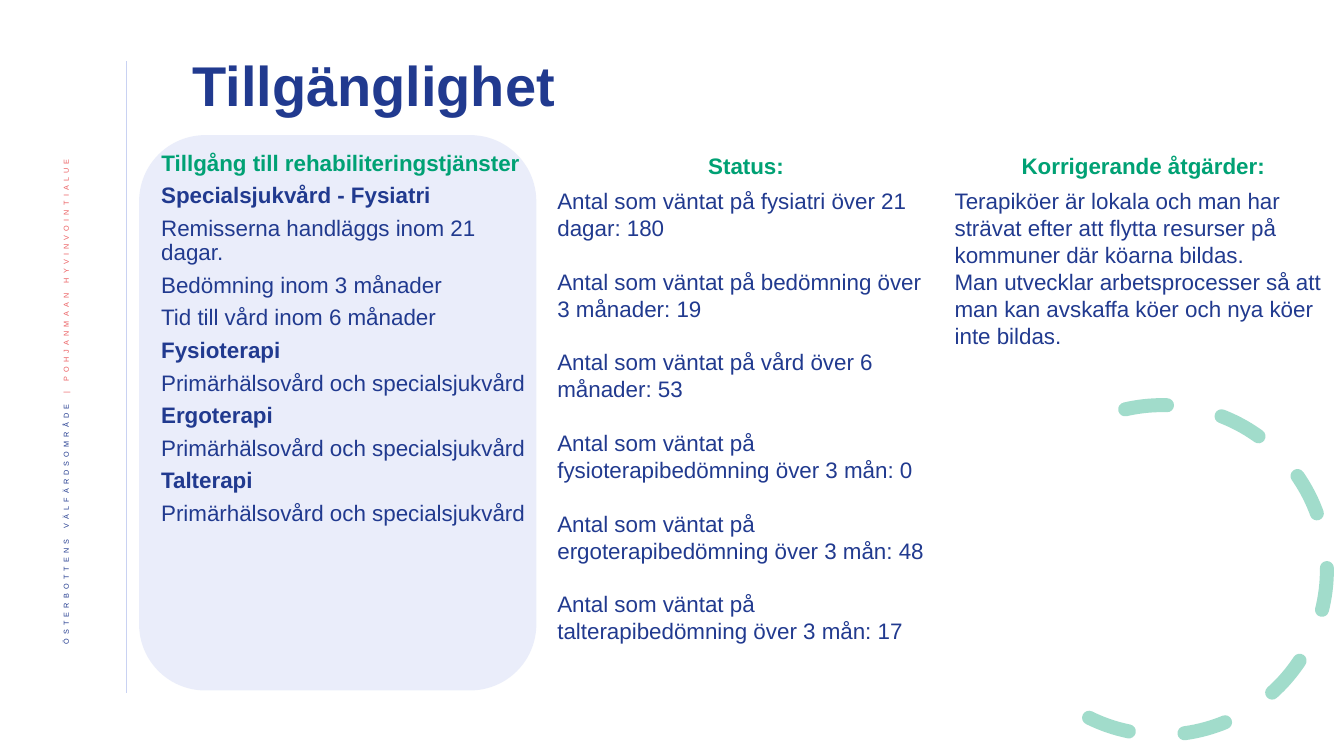
from lxml import etree
from pptx import Presentation
from pptx.dml.color import RGBColor
from pptx.enum.dml import MSO_LINE
from pptx.enum.shapes import MSO_CONNECTOR, MSO_SHAPE
from pptx.enum.text import MSO_ANCHOR, PP_ALIGN
from pptx.oxml.ns import qn
from pptx.util import Inches, Pt

TITLE = "Tillgänglighet"
ORGANISATION = [("ÖSTERBOTTENS VÄLFÄRDSOMRÅDE ", "navy"), ("| POHJANMAAN HYVINVOINTIALUE ", "coral")]
SERVICES_HEADING = "Tillgång till rehabiliteringstjänster "
UNIT_CARE = "Primärhälsovård och specialsjukvård"
SERVICES = [
    ("Specialsjukvård - Fysiatri", [
        "Remisserna handläggs inom 21 dagar.",
        "Bedömning inom 3 månader",
        "Tid till vård inom 6 månader",
    ]),
    ("Fysioterapi", [UNIT_CARE]),
    ("Ergoterapi", [UNIT_CARE]),
    ("Talterapi", [UNIT_CARE]),
]
STATUS_HEADING = "Status:"
STATUS = [
    "Antal som väntat på fysiatri över 21 dagar: 180",
    "Antal som väntat på bedömning över 3 månader: 19",
    "Antal som väntat på vård över 6 månader: 53",
    "Antal som väntat på fysioterapibedömning över 3 mån: 0",
    "Antal som väntat på ergoterapibedömning över 3 mån: 48",
    "Antal som väntat på talterapibedömning över 3 mån: 17",
]
ACTIONS_HEADING = "Korrigerande åtgärder:"
ACTIONS = [
    "Terapiköer är lokala och man har strävat efter att flytta resurser på kommuner där köarna bildas.",
    "Man utvecklar arbetsprocesser så att man kan avskaffa köer och nya köer inte bildas.",
]

THEME = {
    "font": "Arial",
    "navy": RGBColor(0x21, 0x3A, 0x8F),
    "green": RGBColor(0x00, 0xA1, 0x74),
    "coral": RGBColor(0xEB, 0x5C, 0x5F),
    "lavender": RGBColor(0xC9, 0xD2, 0xF2),
    "title": Pt(40),
    "body": Pt(16),
    "side": Pt(9),
    "tight": 0.9,
    "gap": Pt(6),
    "line_gap": Pt(19.2),
}
COLUMN_TOP, COLUMN_WIDTH = 1.46, 3.94


def add_box(slide, left, top, width, height, anchor=MSO_ANCHOR.TOP):
    box = slide.shapes.add_textbox(Inches(left), Inches(top), Inches(width), Inches(height))
    frame = box.text_frame
    frame.word_wrap = True
    frame.vertical_anchor = anchor
    return frame


def add_run(paragraph, text, color, size, bold=False):
    run = paragraph.add_run()
    run.text = text
    for name, value in {"name": THEME["font"], "size": size, "bold": bold}.items():
        setattr(run.font, name, value)
    run.font.color.rgb = THEME[color]
    return run


def add_line(frame, text, color="navy", size="body", bold=False, **layout):
    first = frame.paragraphs[0]
    paragraph = frame.add_paragraph() if first.runs else first
    for name, value in layout.items():
        setattr(paragraph, name, value)
    add_run(paragraph, text, color, THEME[size], bold)


def add_heading(frame, text, **layout):
    add_line(frame, text, "green", bold=True, alignment=PP_ALIGN.CENTER,
             space_after=THEME["gap"], **layout)


def set_alpha(element, percent):
    color = element.find(".//" + qn("a:srgbClr"))
    etree.SubElement(color, qn("a:alpha")).set("val", str(percent * 1000))


def add_divider(slide):
    divider = slide.shapes.add_connector(
        MSO_CONNECTOR.STRAIGHT, Inches(1.25), Inches(0.61), Inches(1.25), Inches(6.88))
    divider.line.color.rgb = THEME["lavender"]
    divider.line.width = Pt(0.5)
    etree.SubElement(divider._element.spPr, qn("a:effectLst"))


def add_organisation(slide):
    frame = add_box(slide, 0.42, 1.42, 0.52, 5.73, MSO_ANCHOR.MIDDLE)
    frame._txBody.bodyPr.set("vert", "vert270")
    paragraph = frame.paragraphs[0]
    paragraph.alignment = PP_ALIGN.RIGHT
    paragraph.line_spacing = THEME["tight"]
    for text, color in ORGANISATION:
        properties = add_run(paragraph, text, color, THEME["side"]).font._element
        properties.set("baseline", "30000")
        properties.set("spc", "300")


def add_dashed_arc(slide):
    arc = slide.shapes.add_shape(MSO_SHAPE.ARC, Inches(9.89), Inches(4.02), Inches(3.27), Inches(3.27))
    arc.shadow.inherit = False
    arc.rotation = 98.9
    for index, degrees in enumerate((158.17, 17.81)):
        arc.adjustments[index] = degrees * 0.6
    arc.fill.background()
    arc.line.color.rgb = THEME["green"]
    arc.line.width = Pt(10)
    arc.line.dash_style = MSO_LINE.DASH
    outline = arc._element.spPr.find(qn("a:ln"))
    outline.set("cap", "rnd")
    set_alpha(outline, 36)


def add_panel(slide):
    panel = slide.shapes.add_shape(
        MSO_SHAPE.ROUNDED_RECTANGLE, Inches(1.38), Inches(1.34), Inches(COLUMN_WIDTH), Inches(5.51))
    panel.shadow.inherit = False
    panel.fill.solid()
    panel.fill.fore_color.rgb = THEME["lavender"]
    set_alpha(panel._element.spPr.find(qn("a:solidFill")), 38)
    panel.line.fill.background()


def add_services(slide):
    frame = add_box(slide, 1.5, COLUMN_TOP, 3.82, 4.5)
    add_heading(frame, SERVICES_HEADING, line_spacing=THEME["tight"])
    layout = {"line_spacing": THEME["tight"], "space_after": THEME["gap"]}
    for service, targets in SERVICES:
        add_line(frame, service, bold=True, **layout)
        for target in targets:
            add_line(frame, target, **layout)


def add_column(slide, left, height, heading, entries, gap):
    frame = add_box(slide, left, COLUMN_TOP, COLUMN_WIDTH, height)
    add_heading(frame, heading)
    for entry in entries:
        add_line(frame, entry, space_after=gap)


def main():
    deck = Presentation()
    deck.slide_width, deck.slide_height = Inches(13.33), Inches(7.5)
    slide = deck.slides.add_slide(deck.slide_layouts[6])
    add_divider(slide)
    add_organisation(slide)
    add_dashed_arc(slide)
    title = add_box(slide, 1.81, 0.45, 10.2, 0.85, MSO_ANCHOR.MIDDLE)
    add_line(title, TITLE, size="title", bold=True, line_spacing=THEME["tight"])
    add_panel(slide)
    add_services(slide)
    add_column(slide, 5.43, 5.57, STATUS_HEADING, STATUS, THEME["line_gap"])
    add_column(slide, 5.43 + COLUMN_WIDTH, 2.07, ACTIONS_HEADING, ACTIONS, Pt(0))
    deck.save("out.pptx")


if __name__ == "__main__":
    main()
